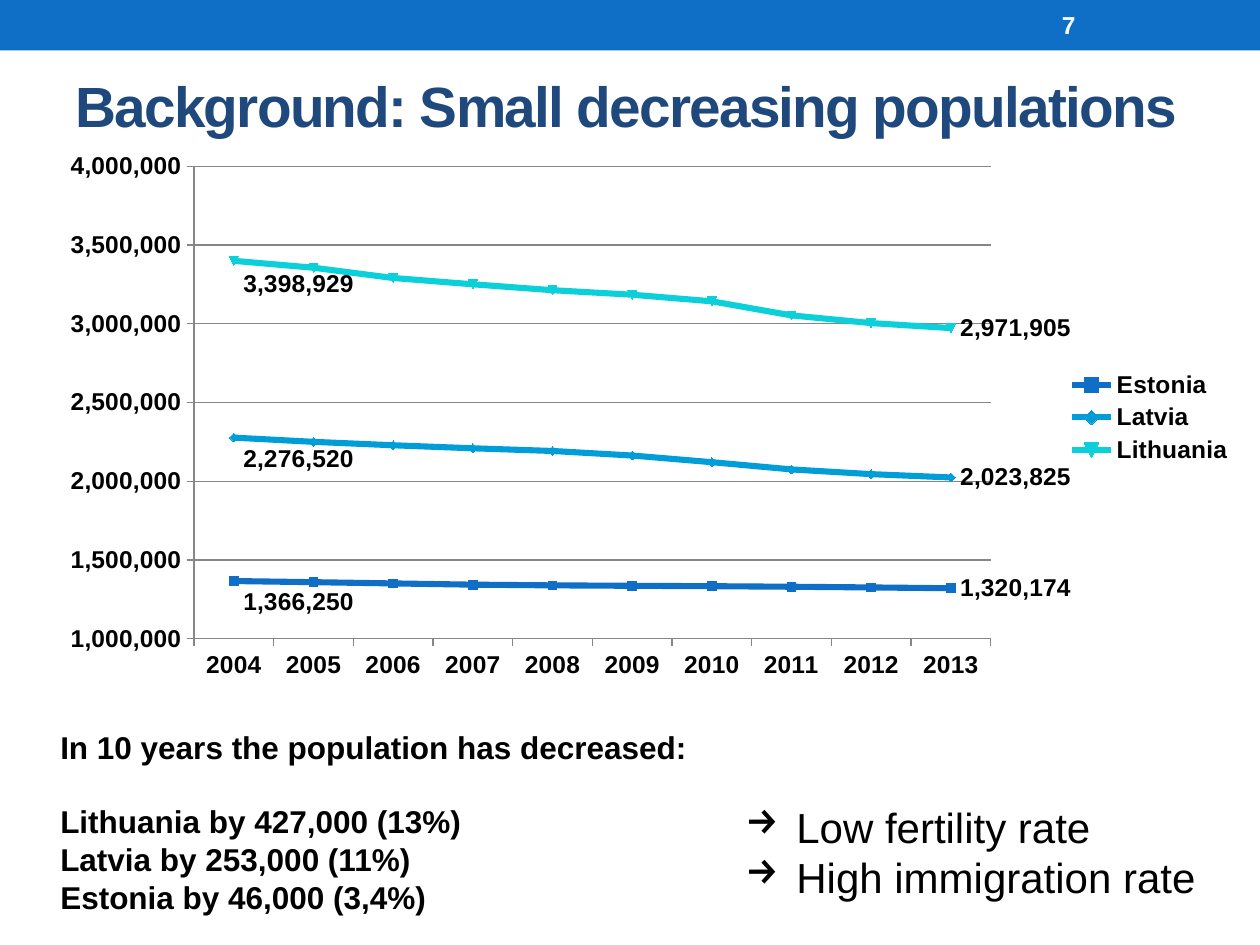
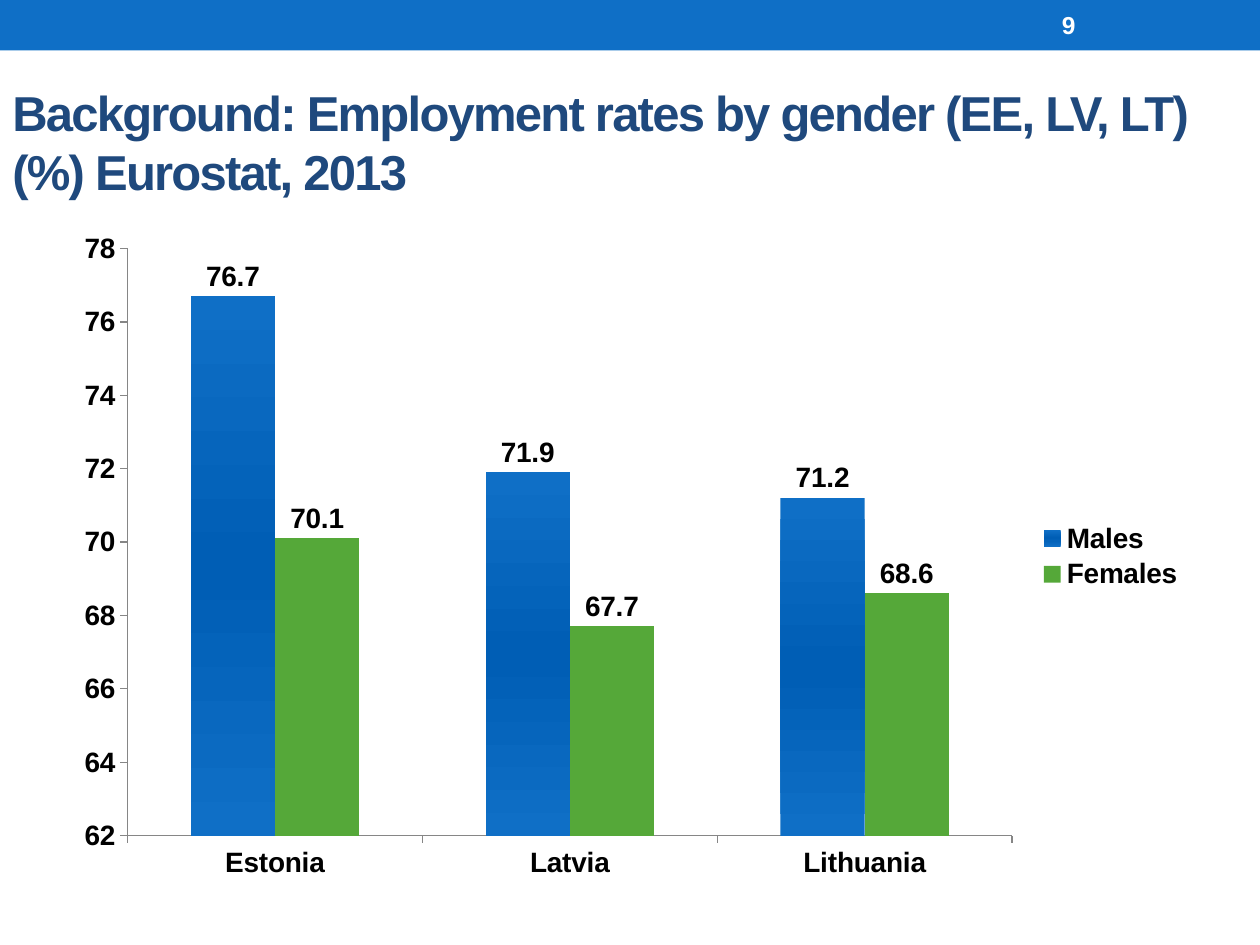
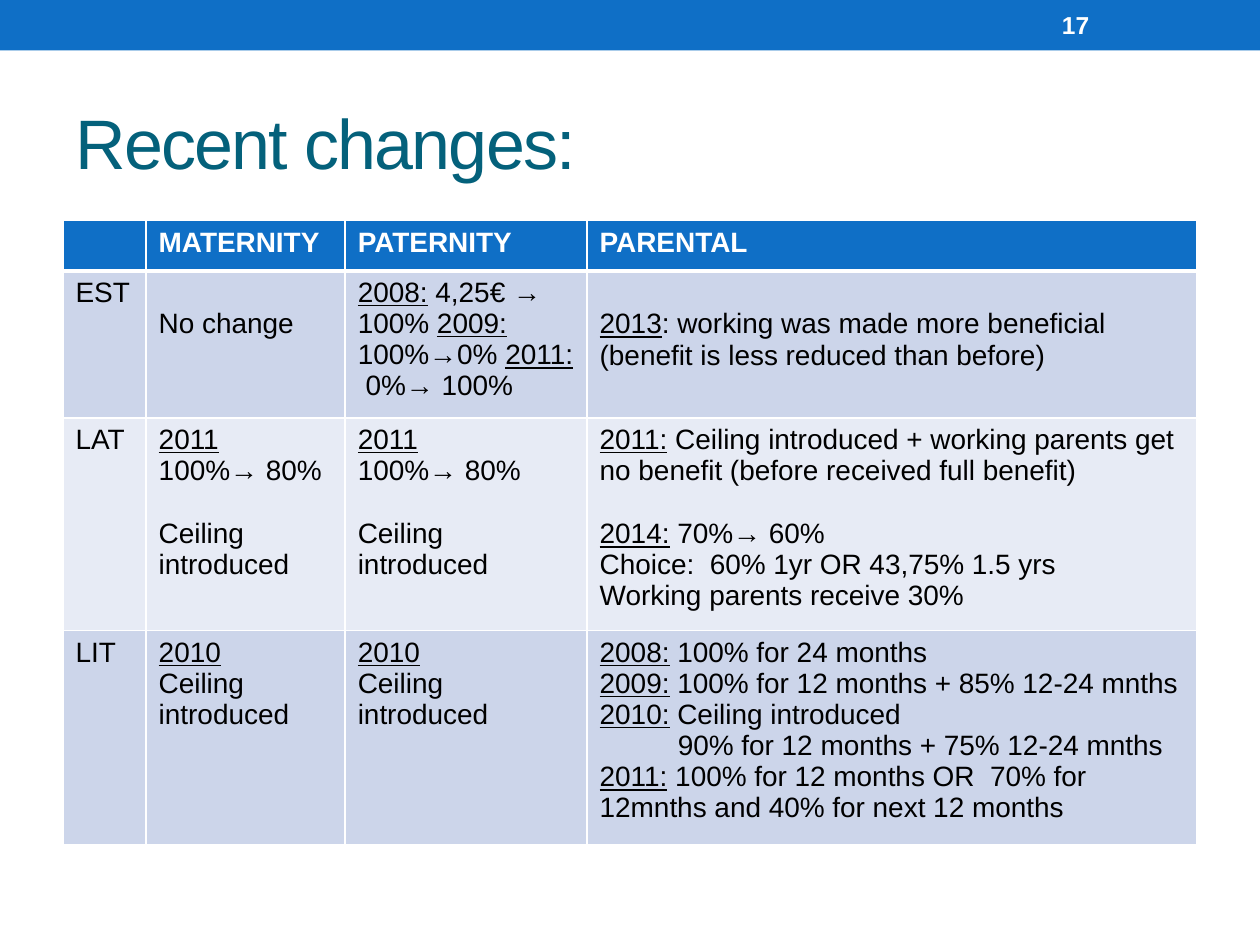
from lxml import etree
from pptx import Presentation
from pptx.chart.data import CategoryChartData
from pptx.dml.color import RGBColor
from pptx.enum.chart import XL_CHART_TYPE, XL_LABEL_POSITION, XL_LEGEND_POSITION, XL_TICK_MARK
from pptx.enum.shapes import MSO_SHAPE
from pptx.enum.text import MSO_ANCHOR
from pptx.oxml import parse_xml
from pptx.oxml.ns import nsdecls, qn
from pptx.util import Inches, Pt

LINE, COLUMN = XL_CHART_TYPE.LINE, XL_CHART_TYPE.COLUMN_CLUSTERED
RIGHT, OUTSIDE_END = XL_LABEL_POSITION.RIGHT, XL_LABEL_POSITION.OUTSIDE_END
LEGEND_RIGHT = XL_LEGEND_POSITION.RIGHT
TICK_OUT, TICK_NONE = XL_TICK_MARK.OUTSIDE, XL_TICK_MARK.NONE
RECTANGLE = MSO_SHAPE.RECTANGLE
TOP, MIDDLE = MSO_ANCHOR.TOP, MSO_ANCHOR.MIDDLE

FONT = "Arial"
BLACK = RGBColor(0, 0, 0)
WHITE = RGBColor(0xFF, 0xFF, 0xFF)
BLUE = RGBColor(0x0F, 0x6F, 0xC6)
DEEP_BLUE = RGBColor(0x00, 0x5E, 0xB5)
SKY = RGBColor(0x00, 0x9D, 0xD9)
CYAN = RGBColor(0x0B, 0xD0, 0xD9)
GREEN = RGBColor(0x55, 0xA8, 0x39)
NAVY = RGBColor(0x1F, 0x49, 0x7D)
TEAL = RGBColor(0x04, 0x61, 0x7B)
GREY = RGBColor(0x86, 0x86, 0x86)
ROW_DARK = RGBColor(0xCC, 0xD5, 0xEA)
ROW_LIGHT = RGBColor(0xE7, 0xEB, 0xF5)

# Slide 1: population by country; the last item lowers the first label
YEARS = [str(year) for year in range(2004, 2014)]
POPULATION = [
    ("Estonia", BLUE, [1366250, 1358850, 1350700, 1342920, 1338440,
                       1335740, 1333290, 1329660, 1325217, 1320174], 0.04),
    ("Latvia", SKY, [2276520, 2249724, 2227874, 2208840, 2191810,
                     2162834, 2120504, 2074605, 2044813, 2023825], 0.04),
    ("Lithuania", CYAN, [3398929, 3355220, 3289835, 3249983, 3212605,
                         3183856, 3141976, 3052588, 3003641, 2971905], 0.045),
]
DECREASE = [
    "In 10 years the population has decreased:",
    "",
    "Lithuania by 427,000 (13%)",
    "Latvia by 253,000 (11%)",
    "Estonia by 46,000 (3,4%)",
]
CAUSES = [" Low fertility rate", " High immigration rate"]

# Slide 2: employment rates
COUNTRIES = ["Estonia", "Latvia", "Lithuania"]
EMPLOYMENT = [("Males", BLUE, [76.7, 71.9, 71.2]), ("Females", GREEN, [70.1, 67.7, 68.6])]
MALE_GRADIENT = [(0, BLUE), (50, DEEP_BLUE), (100, BLUE)]

# Slide 3: _text_ is underlined, "" leaves a gap, a tab indents the line
CEILING = "Ceiling introduced"
LAT_CUT = ["_2011_", "100%→ 80%", "", CEILING]
LIT_CAP = ["_2010_", CEILING]
CHANGES = [
    [[], ["MATERNITY"], ["PATERNITY"], ["PARENTAL"]],
    [["EST"], ["", "No change"],
     ["_2008:_ 4,25€ → 100% _2009:_ 100%→0% _2011:_  0%→ 100%"],
     ["", "_2013_: working was made more beneficial (benefit is less reduced than before)"]],
    [["LAT"], LAT_CUT, LAT_CUT,
     ["_2011:_ Ceiling introduced + working parents get no benefit (before received full benefit)",
      "",
      "_2014:_ 70%→ 60%",
      "Choice:  60% 1yr OR 43,75% 1.5 yrs",
      "Working parents receive 30%"]],
    [["LIT"], LIT_CAP, LIT_CAP,
     ["_2008:_ 100% for 24 months",
      "_2009:_ 100% for 12 months + 85% 12-24 mnths",
      "_2010:_ Ceiling introduced",
      "\t90% for 12 months + 75% 12-24 mnths",
      "_2011:_ 100% for 12 months OR  70% for 12mnths and 40% for next 12 months"]],
]
COL_WIDTHS = [0.66, 1.58, 1.92, 4.84]
ROW_HEIGHTS = [0.4, 1.08, 1.59, 1.57]


def style(font, size, color=BLACK, bold=False):
    font.name, font.size, font.bold = FONT, Pt(size), bold
    font.color.rgb = color


def write(tf, lines, size, color=BLACK, bold=False):
    """Write lines as paragraphs, with gaps, indents and underlines as marked."""
    p, gap = tf.paragraphs[0], False
    style(p.font, size, color, bold)
    for line in lines:
        if not line:
            gap = True
            continue
        if p.runs:
            p = tf.add_paragraph()
            style(p.font, size, color, bold)
            if gap:
                p.space_before = Pt(size * 1.15)
        gap = False
        if line.startswith("\t"):
            p._p.get_or_add_pPr().set("marL", str(Inches(0.62)))
        for i, part in enumerate(line.strip("\t").split("_")):
            if part:
                r = p.add_run()
                r.text = part
                if i % 2:
                    r.font.underline = True


def add_text(slide, box, lines, size, color=BLACK, bold=False, anchor=TOP):
    tf = slide.shapes.add_textbox(*map(Inches, box)).text_frame
    tf.word_wrap = True
    tf.vertical_anchor = anchor
    write(tf, lines, size, color, bold)
    return tf


def new_slide(prs, number, title, box, size, color=NAVY, bold=True):
    """Blank slide with the top band, page number and title."""
    slide = prs.slides.add_slide(prs.slide_layouts[6])
    band = slide.shapes.add_shape(RECTANGLE, 0, 0, prs.slide_width, Inches(0.4))
    band.shadow.inherit = False
    band.fill.solid()
    band.fill.fore_color.rgb = BLUE
    band.line.fill.background()
    add_text(slide, (8.33, 0.02, 1.17, 0.36), [str(number)], 14, WHITE, True, MIDDLE)
    tf = add_text(slide, box, [title], size, color, bold, MIDDLE)
    tf.paragraphs[0].runs[0]._r.get_or_add_rPr().set("spc", "-100")
    return slide


def manual_layout(**values):
    items = "".join(f'<c:{key} val="{value}"/>' for key, value in values.items())
    return parse_xml(f'<c:layout {nsdecls("c")}><c:manualLayout>{items}'
                     "</c:manualLayout></c:layout>")


def add_chart(slide, kind, box, categories, series, size, scale, plot_box, number_format):
    data = CategoryChartData(number_format=number_format)
    data.categories = categories
    for name, _, values, *_ in series:
        data.add_series(name, values)
    chart = slide.shapes.add_chart(kind, *map(Inches, box), data).chart
    style(chart.font, size, bold=True)
    chart.has_title = False
    chart.has_legend = True
    chart.legend.position = LEGEND_RIGHT
    chart.legend.include_in_layout = False
    for axis in (chart.category_axis, chart.value_axis):
        axis.major_tick_mark, axis.minor_tick_mark = TICK_OUT, TICK_NONE
        axis.format.line.color.rgb = GREY
    axis = chart.value_axis
    axis.has_major_gridlines = kind == LINE
    axis.minimum_scale, axis.maximum_scale, axis.major_unit = scale
    axis.tick_labels.number_format = number_format
    axis.tick_labels.number_format_is_linked = False
    # Fixed inner plot area, as fractions of the chart
    area = chart._chartSpace.chart.plotArea
    for old in area.findall(qn("c:layout")):
        area.remove(old)
    x, y, w, h = plot_box
    area.insert(0, manual_layout(layoutTarget="inner", xMode="edge", yMode="edge",
                                 x=x, y=y, w=w, h=h))
    return chart


def population_slide(prs):
    slide = new_slide(prs, 7, "Background: Small decreasing populations",
                      (0.5, 0.29, 9, 1.08), 32.4)
    chart = add_chart(slide, LINE, (0.38, 1.21, 9.51, 4.19), YEARS, POPULATION, 14,
                      (1000000, 4000000, 500000), (0.122, 0.022, 0.665, 0.899), "#,##0")
    chart.value_axis.major_gridlines.format.line.color.rgb = GREY
    for series, (_, color, values, drop) in zip(chart.plots[0].series, POPULATION):
        series.smooth = False
        series.marker.style = None
        series.format.line.color.rgb = color
        series.format.line.width = Pt(3.5)
        series.data_labels.show_value = False
        for index in (0, len(values) - 1):
            label = series.points[index].data_label
            style(label.font, 14, bold=True)
            label.position = RIGHT
        first = series.data_labels._element.find(qn("c:dLbl"))
        first.insert(1, manual_layout(x=0, y=drop))
    add_text(slide, (0.38, 5.73, 5.22, 1.62), DECREASE, 18, bold=True)
    tf = add_text(slide, (5.82, 6.31, 4.07, 0.91), CAUSES, 24)
    for p in tf.paragraphs:
        pPr = p._p.get_or_add_pPr()
        pPr.set("marL", str(Inches(0.31)))
        pPr.set("indent", str(-Inches(0.31)))
        pPr.insert(0, parse_xml(f'<a:buChar {nsdecls("a")} char="→"/>'))


def employment_slide(prs):
    slide = new_slide(prs, 9, "Background: Employment rates by gender (EE, LV, LT) "
                      "(%) Eurostat, 2013", (0, 0.58, 9.87, 1.08), 28)
    chart = add_chart(slide, COLUMN, (0.5, 1.75, 9, 5.33), COUNTRIES, EMPLOYMENT, 16,
                      (62, 78, 2), (0.057, 0.042, 0.78, 0.874), "General")
    plot = chart.plots[0]
    plot.gap_width, plot.overlap, plot.vary_by_categories = 150, 0, False
    for series, (_, color, _) in zip(plot.series, EMPLOYMENT):
        series.format.fill.solid()
        series.format.fill.fore_color.rgb = color
        series.data_labels.show_value = True
        series.data_labels.position = OUTSIDE_END
        style(series.data_labels.font, 16, bold=True)
    # Males: vertical gradient, darker in the middle
    fill = plot.series[0].format.fill
    fill.gradient()
    fill.gradient_angle = 90
    stops = plot.series[0]._element.find(".//" + qn("a:gsLst"))
    for old in list(stops):
        stops.remove(old)
    for percent, color in MALE_GRADIENT:
        stop = etree.SubElement(stops, qn("a:gs"), pos=str(percent * 1000))
        etree.SubElement(stop, qn("a:srgbClr"), val=str(color))


def set_borders(cell, bottom):
    tcPr = cell._tc.get_or_add_tcPr()
    for side, width in (("L", 1), ("R", 1), ("T", 1), ("B", bottom)):
        ln = etree.SubElement(tcPr, qn(f"a:ln{side}"), w=str(Pt(width)))
        fill = etree.SubElement(ln, qn("a:solidFill"))
        etree.SubElement(fill, qn("a:srgbClr"), val=str(WHITE))


def changes_slide(prs):
    slide = new_slide(prs, 17, "Recent changes:", (0.5, 0.58, 9, 1.08), 40, TEAL, False)
    table = slide.shapes.add_table(
        len(ROW_HEIGHTS), len(COL_WIDTHS), Inches(0.5), Inches(1.75),
        Inches(sum(COL_WIDTHS)), Inches(sum(ROW_HEIGHTS))).table
    for column, width in zip(table.columns, COL_WIDTHS):
        column.width = Inches(width)
    for i, (row, height, texts) in enumerate(zip(table.rows, ROW_HEIGHTS, CHANGES)):
        row.height = Inches(height)
        header = i == 0
        for cell, lines in zip(row.cells, texts):
            set_borders(cell, 3 if header else 1)
            cell.fill.solid()
            cell.fill.fore_color.rgb = BLUE if header else ROW_DARK if i % 2 else ROW_LIGHT
            if lines and not lines[0]:
                cell.margin_top = Inches(0.3)
            write(cell.text_frame, lines, 16, WHITE if header else BLACK, header)


def main():
    prs = Presentation()
    prs.slide_width, prs.slide_height = Inches(10), Inches(7.5)
    population_slide(prs)
    employment_slide(prs)
    changes_slide(prs)
    prs.save("out.pptx")


if __name__ == "__main__":
    main()
